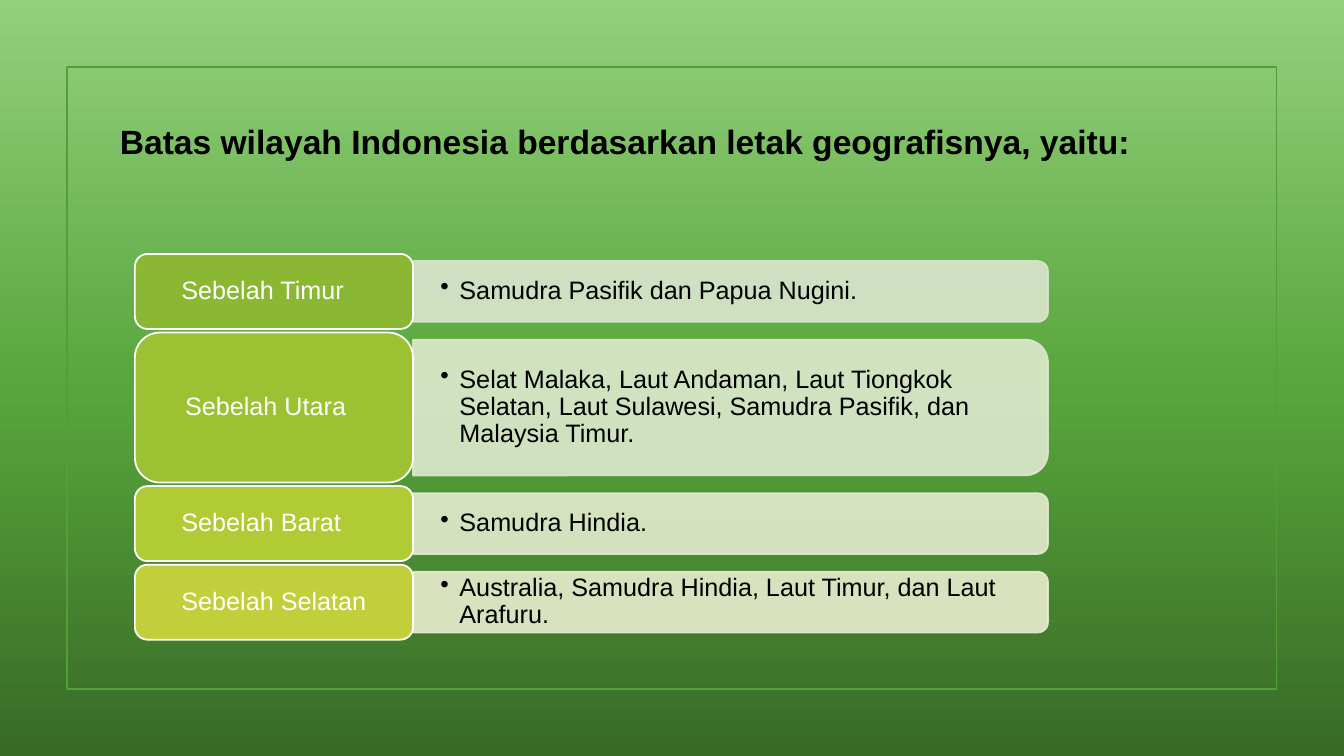
from copy import deepcopy

from lxml.etree import SubElement
from pptx import Presentation
from pptx.dml.color import RGBColor
from pptx.enum.shapes import MSO_SHAPE
from pptx.enum.text import MSO_ANCHOR, PP_ALIGN
from pptx.oxml.ns import qn
from pptx.util import Cm, Pt

FONT = "Arial"
BLACK = RGBColor(0x00, 0x00, 0x00)
WHITE = RGBColor(0xFF, 0xFF, 0xFF)
FRAME_GREEN = RGBColor(0x54, 0x9E, 0x39)
BACKGROUND_STOPS = [
    (0, RGBColor(0x38, 0x6A, 0x26)),
    (0.48, RGBColor(0x57, 0xA5, 0x3B)),
    (1, RGBColor(0x93, 0xD0, 0x7D)),
]

# Label, detail, height in cm, label colour, detail colour
BORDERS = [
    ("Sebelah Timur", "Samudra Pasifik dan Papua Nugini.", 1.89,
     RGBColor(0x8A, 0xB8, 0x33), RGBColor(0xDA, 0xE6, 0xCE)),
    ("Sebelah Utara",
     "Selat Malaka, Laut Andaman, Laut Tiongkok Selatan, Laut Sulawesi, "
     "Samudra Pasifik, dan Malaysia Timur.", 3.78,
     RGBColor(0x9C, 0xC2, 0x33), RGBColor(0xDE, 0xE9, 0xCE)),
    ("Sebelah Barat", "Samudra Hindia.", 1.89,
     RGBColor(0xB0, 0xCB, 0x34), RGBColor(0xE3, 0xEB, 0xCE)),
    ("Sebelah Selatan",
     "Australia, Samudra Hindia, Laut Timur, dan Laut Arafuru.", 1.89,
     RGBColor(0xC0, 0xCF, 0x3A), RGBColor(0xE8, 0xED, 0xCE)),
]
ROW_GAP = 0.09
LABEL_WIDTH = 7.01
DETAIL_MARGIN = 0.18


def paint_background(page):
    fill = page.background.fill
    fill.gradient()
    fill.gradient_angle = 90
    first_stop = page.background._cSld.find(".//" + qn("a:gs"))
    first_stop.addnext(deepcopy(first_stop))
    for stop, (position, color) in zip(fill.gradient_stops, BACKGROUND_STOPS):
        stop.position = position
        stop.color.rgb = color


def add_panel(page, preset, left, top, width, height, fill, line):
    """Place a panel; no fill colour leaves it open."""
    panel = page.shapes.add_shape(preset, Cm(left), Cm(top), Cm(width), Cm(height))
    panel.shadow.inherit = False
    if fill is None:
        panel.fill.background()
    else:
        panel.fill.solid()
        panel.fill.fore_color.rgb = fill
    panel.line.color.rgb = line
    panel.line.width = Pt(1.25)
    return panel


def write(box, text, size, color, inset, bold=False):
    frame = box.text_frame
    frame.word_wrap = True
    frame.vertical_anchor = MSO_ANCHOR.MIDDLE
    frame.margin_left = frame.margin_right = Cm(inset)
    frame.margin_top = frame.margin_bottom = 0
    para = frame.paragraphs[0]
    para.text = text
    para.alignment = PP_ALIGN.LEFT
    para.line_spacing = 0.9
    para.font.name = FONT
    para.font.size = Pt(size)
    para.font.bold = bold
    para.font.color.rgb = color
    return para


def add_title(page, left, top, width, height):
    box = page.shapes.add_textbox(Cm(left), Cm(top), Cm(width), Cm(height))
    write(box, "Batas wilayah Indonesia berdasarkan letak geografisnya, yaitu:",
          24, BLACK, 0.25, bold=True)


def add_detail(page, text, color, left, top, width, height):
    # Turned a quarter so that the rounded corners face right
    panel = add_panel(page, MSO_SHAPE.ROUND_2_SAME_RECTANGLE,
                      left + (width - height) / 2, top + (height - width) / 2,
                      height, width, color, color)
    panel.rotation = 90
    for shade in panel._element.spPr.iter(qn("a:srgbClr")):
        SubElement(shade, qn("a:alpha"), val="90000")

    # Upright bulleted text over the panel
    box = page.shapes.add_textbox(Cm(left), Cm(top), Cm(width), Cm(height))
    para = write(box, text, 18, BLACK, 0.69)
    properties = para._p.get_or_add_pPr()
    properties.set("marL", str(Cm(0.48)))
    properties.set("indent", str(-Cm(0.48)))
    bullet = SubElement(properties, qn("a:buChar"), char="•")
    properties.find(qn("a:defRPr")).addprevious(bullet)


def add_border_list(page, left, top, width):
    for label, detail, height, label_color, detail_color in BORDERS:
        add_detail(page, detail, detail_color, left + LABEL_WIDTH,
                   top + DETAIL_MARGIN, width - LABEL_WIDTH,
                   height - 2 * DETAIL_MARGIN)
        tile = add_panel(page, MSO_SHAPE.ROUNDED_RECTANGLE, left, top,
                         LABEL_WIDTH, height, label_color, WHITE)
        write(tile, label, 18, WHITE, 1.08)
        top += height + ROW_GAP


def main():
    deck = Presentation()
    deck.slide_width, deck.slide_height = Cm(33.87), Cm(19.05)
    page = deck.slides.add_slide(deck.slide_layouts[6])
    paint_background(page)
    add_panel(page, MSO_SHAPE.RECTANGLE, 1.69, 1.69, 30.48, 15.67,
              None, FRAME_GREEN)
    add_border_list(page, 3.4, 6.4, 23.01)
    add_title(page, 2.77, 2.97, 27.23, 1.28)
    deck.save("out.pptx")


if __name__ == "__main__":
    main()
